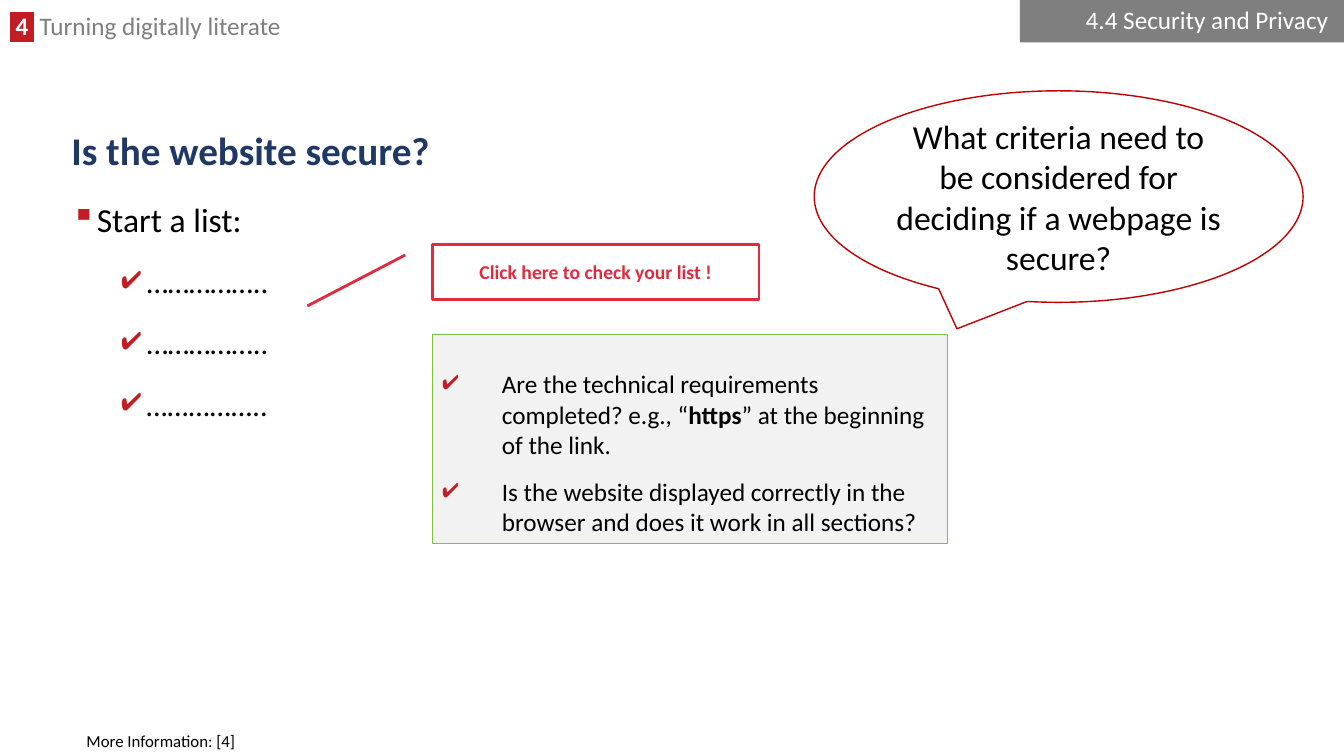
from lxml import etree
from pptx import Presentation
from pptx import util as u
from pptx.dml.color import RGBColor
from pptx.enum import shapes, text
from pptx.oxml.ns import qn

COLORS = {
    "red": "C01E24", "grey": "7F7F7F", "navy": "203864", "black": "000000",
    "white": "FFFFFF", "pale": "F2F2F2", "green": "80C141",
    "outline": "C00000", "button": "E12A3C",
}
ALIGN = text.PP_ALIGN
ANCHOR = text.MSO_ANCHOR
SHAPE = shapes.MSO_SHAPE


def color(name):
    return RGBColor.from_string(COLORS[name])


class SlideBuilder:
    font = "Calibri"

    def __init__(self, prs):
        self.slide = prs.slides.add_slide(prs.slide_layouts[6])

    def frame(self, sp, anchor, top=0.13):
        tf = sp.text_frame
        tf.word_wrap = True
        tf.vertical_anchor = anchor
        tf.margin_left = tf.margin_right = u.Cm(0.25)
        tf.margin_top, tf.margin_bottom = u.Cm(top), u.Cm(0.13)
        return tf

    def textbox(self, x, y, w, h, anchor=ANCHOR.TOP):
        sp = self.slide.shapes.add_textbox(u.Cm(x), u.Cm(y), u.Cm(w), u.Cm(h))
        return self.frame(sp, anchor)

    def shape(self, kind, x, y, w, h, fill, line=None, width=1,
              anchor=ANCHOR.MIDDLE, top=0.13, adjust=()):
        sp = self.slide.shapes.add_shape(kind, u.Cm(x), u.Cm(y), u.Cm(w), u.Cm(h))
        sp.shadow.inherit = False
        sp.fill.solid()
        sp.fill.fore_color.rgb = color(fill)
        if line:
            sp.line.color.rgb = color(line)
            sp.line.width = u.Pt(width)
        else:
            sp.line.fill.background()
        for i, value in enumerate(adjust):
            sp.adjustments[i] = value
        return self.frame(sp, anchor, top)

    def paragraph(self, tf, content, size, fill="black", bold=False, italic=False,
                  align=ALIGN.LEFT, spacing=1.0, before=0, after=0):
        """Fill the empty first paragraph, or append one."""
        first = not tf.text
        p = tf.paragraphs[0] if first else tf.add_paragraph()
        p.text = content
        p.alignment = align
        p.line_spacing = spacing
        p.space_before = u.Pt(0 if first else before)
        p.space_after = u.Pt(after)
        self.style(p.runs[0], size, fill, bold, italic)
        return p

    def run(self, p, content, size, fill="black", bold=False):
        r = p.add_run()
        r.text = content
        self.style(r, size, fill, bold)

    def style(self, r, size, fill, bold=False, italic=False):
        r.font.name = self.font
        r.font.size = u.Pt(size)
        r.font.bold = bold
        r.font.italic = italic
        r.font.color.rgb = color(fill)

    def highlight(self, r, fill):
        mark = etree.Element(qn("a:highlight"))
        etree.SubElement(mark, qn("a:srgbClr")).set("val", COLORS[fill])
        r.font._element.find(qn("a:solidFill")).addnext(mark)

    def bullet(self, p, char, left, hanging):
        pPr = p._p.get_or_add_pPr()
        pPr.set("marL", str(u.Cm(left)))
        pPr.set("indent", str(-u.Cm(hanging)))
        clr = etree.SubElement(pPr, qn("a:buClr"))
        etree.SubElement(clr, qn("a:srgbClr")).set("val", COLORS["red"])
        etree.SubElement(pPr, qn("a:buChar")).set("char", char)


def main():
    prs = Presentation()
    prs.slide_width, prs.slide_height = u.Cm(33.87), u.Cm(19.05)
    s = SlideBuilder(prs)

    # Chapter header
    tf = s.textbox(0, 0.28, 24.18, 0.89)
    p = s.paragraph(tf, " 4 ", 18, "white", bold=True, spacing=0.8)
    s.highlight(p.runs[0], "red")
    s.run(p, " Turning digitally literate", 18, "grey")

    # Title
    tf = s.textbox(1.55, 3, 30.73, 1.68, ANCHOR.MIDDLE)
    s.paragraph(tf, "Is the website secure?", 28, "navy", bold=True, spacing=0.9)

    # Section tab
    tf = s.shape(SHAPE.RECTANGLE, 25.7, 0, 8.17, 1.07, "grey")
    s.paragraph(tf, "4.4 Security and Privacy ", 18, "white",
                align=ALIGN.RIGHT, spacing=0.9)

    # List to complete
    tf = s.textbox(1.55, 4.67, 19.66, 14)
    p = s.paragraph(tf, "Start a list:", 24, spacing=1.2)
    s.bullet(p, "▪", 0.64, 0.64)
    for italic in (False, False, True):
        p = s.paragraph(tf, "……………..", 22, italic=italic, spacing=1.2, before=12)
        s.bullet(p, "✔", 1.9, 0.64)

    # Footer
    tf = s.textbox(1.93, 18.29, 31.9, 0.76)
    s.paragraph(tf, "More Information: [4]", 12)

    # Question bubble
    tf = s.shape(SHAPE.OVAL_CALLOUT, 20.52, 2.29, 12.32, 5.33, "white", "outline",
                 adjust=(-0.208, 0.625))
    s.paragraph(tf, "What criteria need to be considered for deciding "
                "if a webpage is secure?", 24, align=ALIGN.CENTER)

    # Answer box
    tf = s.shape(SHAPE.RECTANGLE, 10.9, 8.43, 12.98, 5.26, "pale", "green", 0.75,
                 anchor=ANCHOR.TOP, top=0.86)
    answers = (
        (("Are the technical requirements completed? e.g., “", False),
         ("https", True), ("” at the beginning of the link.", False)),
        (("Is the website displayed correctly in the browser "
          "and does it work in all sections?", False),),
    )
    for (start, bold), *rest in answers:
        p = s.paragraph(tf, start, 18, bold=bold, before=6, after=6)
        s.bullet(p, "✔", 1.5, 1.5)
        for part, bold in rest:
            s.run(p, part, 18, bold=bold)

    # Button with leader line
    tf = s.shape(SHAPE.LINE_CALLOUT_1, 10.9, 6.17, 8.23, 1.37, "white", "button", 2)
    s.paragraph(tf, "Click here to check your list !", 14, "button", bold=True,
                align=ALIGN.CENTER)

    prs.save("out.pptx")


if __name__ == "__main__":
    main()
